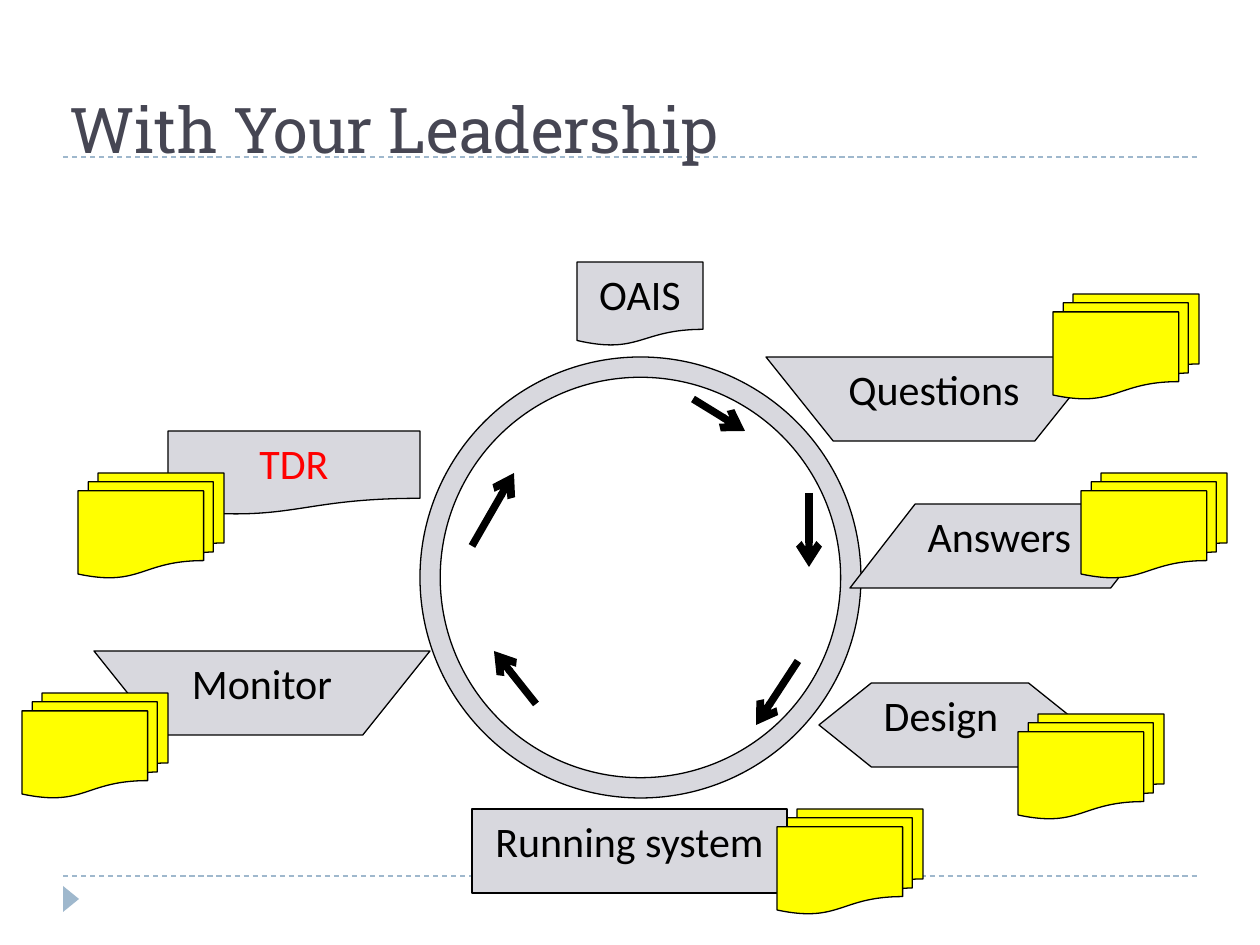
from lxml import etree
from pptx import Presentation
from pptx.dml.color import RGBColor
from pptx.enum.dml import MSO_LINE
from pptx.enum.shapes import MSO_CONNECTOR, MSO_SHAPE as SHAPE
from pptx.enum.text import MSO_ANCHOR, PP_ALIGN as ALIGN
from pptx.oxml.ns import qn
from pptx.util import Emu, Pt

PX_PER_INCH = 126
BLACK, GREY, YELLOW, RED = "000000", "D8D8DE", "FFFF00", "FF0000"
RULE, TITLE = "9FB8CD", "464653"

# Stages of the cycle: shape, box, label, alignment, text colour
STAGES = [
    (SHAPE.FLOWCHART_DOCUMENT, (577, 262, 126, 84), "OAIS", ALIGN.CENTER, BLACK),
    (SHAPE.FLOWCHART_DATA, (850, 504, 326, 84), "Answers", ALIGN.LEFT, BLACK),
    (SHAPE.FLOWCHART_MANUAL_OPERATION, (766, 357, 336, 84), "Questions", ALIGN.CENTER, BLACK),
    (SHAPE.FLOWCHART_PREPARATION, (819, 683, 262, 84), "Design", ALIGN.LEFT, BLACK),
    (SHAPE.FLOWCHART_PROCESS, (472, 809, 315, 84), "Running system", ALIGN.CENTER, BLACK),
    (SHAPE.FLOWCHART_MANUAL_OPERATION, (94, 651, 336, 84), "Monitor", ALIGN.CENTER, BLACK),
    (SHAPE.FLOWCHART_DOCUMENT, (168, 431, 252, 84), "TDR", ALIGN.CENTER, RED),
]
# Arrows inside the ring, clockwise from the top
ARROWS = [
    (693, 399, 745, 431),
    (809, 493, 809, 567),
    (798, 661, 756, 725),
    (536, 704, 494, 651),
    (472, 546, 514, 473),
]
# Top left corner of each stack of documents
STACKS = [(1053, 294), (1081, 473), (1018, 714), (777, 809), (22, 693), (78, 473)]


def px(n):
    return Emu(round(n * 914400 / PX_PER_INCH))


def rgb(color):
    return RGBColor.from_string(color)


def write(sp, text, font, size, color, align=ALIGN.LEFT, anchor=MSO_ANCHOR.TOP):
    tf = sp.text_frame
    tf.word_wrap = True
    tf.vertical_anchor = anchor
    tf.text = text
    p = tf.paragraphs[0]
    p.alignment = align
    f = p.runs[0].font
    f.name, f.size = font, Pt(size)
    f.color.rgb = rgb(color)


def add_shape(s, kind, box, fill, line=BLACK):
    sp = s.shapes.add_shape(kind, *map(px, box))
    sp.shadow.inherit = False
    sp.fill.solid()
    sp.fill.fore_color.rgb = rgb(fill)
    if line:
        sp.line.color.rgb = rgb(line)
        sp.line.width = Pt(0.75)
    else:
        sp.line.fill.background()
    return sp


def add_line(s, ends, color, width):
    cn = s.shapes.add_connector(MSO_CONNECTOR.STRAIGHT, *map(px, ends))
    cn.line.color.rgb = rgb(color)
    cn.line.width = Pt(width)
    etree.SubElement(cn._element.spPr, qn("a:effectLst"))
    return cn


def add_rule(s, y):
    add_line(s, (63, y, 1197, y), RULE, 0.75).line.dash_style = MSO_LINE.DASH


def add_arrow(s, ends):
    cn = add_line(s, ends, BLACK, 4.25)
    etree.SubElement(cn.line._get_or_add_ln(), qn("a:tailEnd"), type="arrow")


def add_title(s, text):
    sp = s.shapes.add_textbox(*map(px, (57, 45, 1134, 127)))
    write(sp, text, "Roboto Slab", 36, TITLE, anchor=MSO_ANCHOR.BOTTOM)


def main():
    prs = Presentation()
    prs.slide_width, prs.slide_height = px(1260), px(945)
    s = prs.slides.add_slide(prs.slide_layouts[6])

    # Frame: rules, corner marker and title
    for y in (876, 157):
        add_rule(s, y)
    marker = add_shape(s, SHAPE.ISOSCELES_TRIANGLE, (58, 891, 26, 16), RULE, None)
    marker.rotation = 90
    add_title(s, "With Your Leadership")

    # Ring with its stages and arrows
    ring = add_shape(s, SHAPE.DONUT, (420, 357, 441, 441), GREY)
    ring.adjustments[0] = 0.046
    for kind, box, label, align, color in STAGES:
        sp = add_shape(s, kind, box, GREY)
        write(sp, label, "Calibri", 24, color, align)
    for ends in ARROWS:
        add_arrow(s, ends)

    # Document stacks
    for x, y in STACKS:
        add_shape(s, SHAPE.FLOWCHART_MULTIDOCUMENT, (x, y, 146, 105), YELLOW)

    prs.save("out.pptx")


if __name__ == "__main__":
    main()
